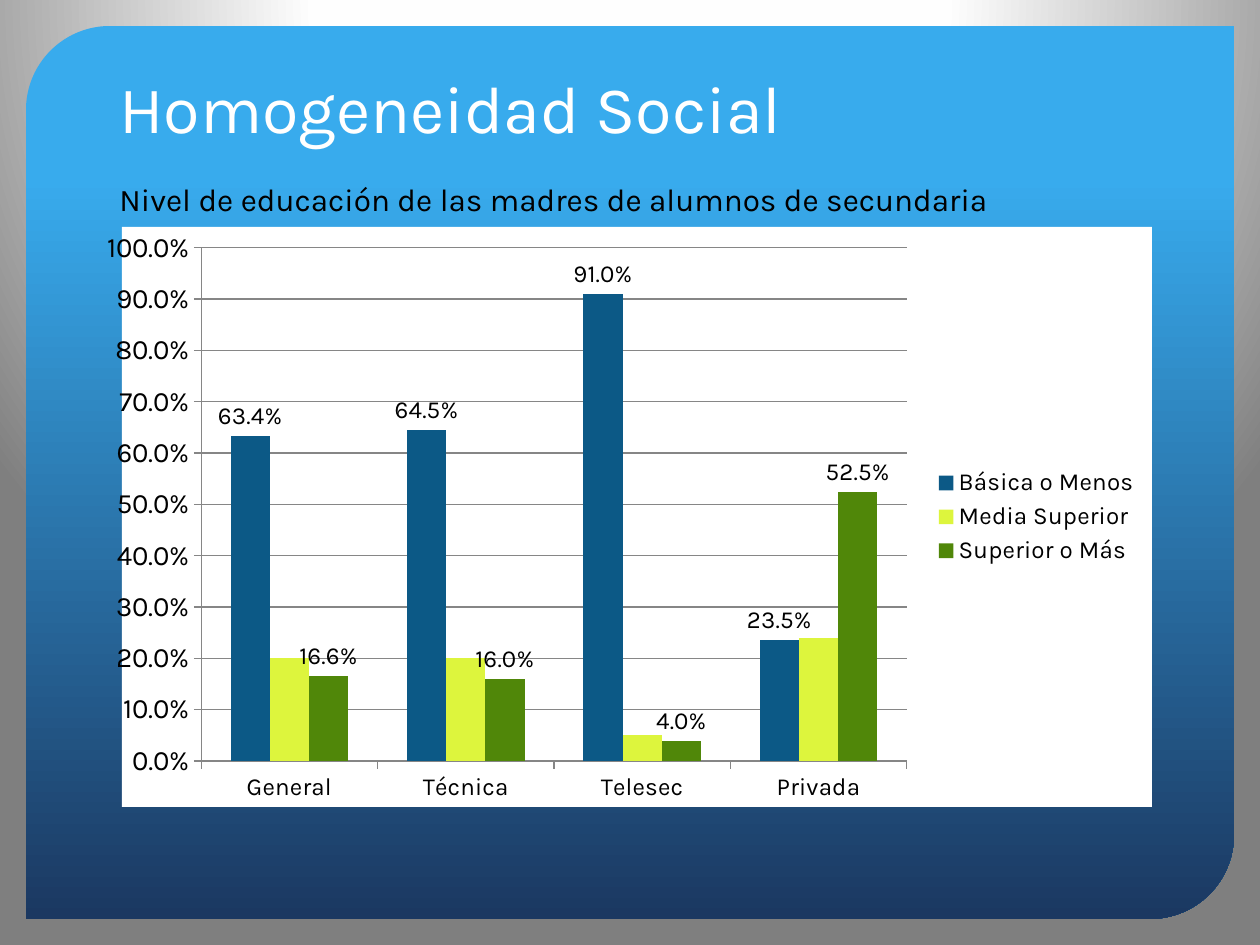
from copy import deepcopy

from pptx import Presentation
from pptx.chart.data import CategoryChartData
from pptx.dml.color import RGBColor
from pptx.enum.chart import XL_CHART_TYPE, XL_LABEL_POSITION, XL_LEGEND_POSITION, XL_TICK_MARK
from pptx.enum.shapes import MSO_SHAPE
from pptx.enum.text import MSO_ANCHOR
from pptx.oxml import parse_xml
from pptx.oxml.ns import nsdecls, qn
from pptx.util import Pt

PX = 914400 / 126
FONT = "Karla"
color = RGBColor.from_string


def box(*lengths):
    return [round(length * PX) for length in lengths]


def add_text(text, frame, size, fill, anchor=MSO_ANCHOR.TOP):
    text_frame = slide.shapes.add_textbox(*box(*frame)).text_frame
    text_frame.word_wrap = True
    text_frame.vertical_anchor = anchor
    paragraph = text_frame.paragraphs[0]
    paragraph.text = text
    font = paragraph.runs[0].font
    font.name = FONT
    font.size = Pt(size)
    font.color.rgb = color(fill)


presentation = Presentation()
presentation.slide_width, presentation.slide_height = box(1260, 945)
slide = presentation.slides.add_slide(presentation.slide_layouts[6])

background = slide.background.fill
background.gradient()
gradient = slide.element.find(".//" + qn("a:gradFill"))
stop_list = gradient.find(qn("a:gsLst"))
stop_list.append(deepcopy(stop_list[-1]))
for stop, position, fill in zip(background.gradient_stops, (0, 0.4, 1), ("FFFFFF", "FEFEFE", "7F7F7F")):
    stop.position = position
    stop.color.rgb = color(fill)
gradient.replace(gradient.find(qn("a:lin")), parse_xml(
    f'<a:path {nsdecls("a")} path="circle">'
    '<a:fillToRect l="50000" t="-80000" r="50000" b="180000"/></a:path>'))

panel = slide.shapes.add_shape(MSO_SHAPE.ROUND_2_DIAG_RECTANGLE, *box(26, 26, 1208, 893))
panel.shadow.inherit = False
panel.adjustments[0] = 0.094
panel.adjustments[1] = 0
panel.line.fill.background()
panel.fill.gradient()
panel.fill.gradient_angle = 270
for stop, position, fill in zip(panel.fill.gradient_stops, (0.17, 1), ("38ABED", "1B3861")):
    stop.position = position
    stop.color.rgb = color(fill)

add_text("Homogeneidad Social", (107, 53, 1045, 100), 38, "FFFFFF", MSO_ANCHOR.BOTTOM)

series_data = [
    ("Básica o Menos", (0.634, 0.645, 0.91, 0.235), "0C5986", True),
    ("Media Superior", (0.2, 0.2, 0.05, 0.24), "DDF53D", False),
    ("Superior o Más", (0.166, 0.16, 0.04, 0.525), "508709", True),
]
chart_data = CategoryChartData(number_format="0.0%")
chart_data.categories = ["General", "Técnica", "Telesec", "Privada"]
for name, values, fill, labelled in series_data:
    chart_data.add_series(name, values)
chart = slide.shapes.add_chart(
    XL_CHART_TYPE.COLUMN_CLUSTERED, *box(107, 227, 1045, 580), chart_data).chart
chart.has_title = False
chart.font.name = FONT
chart.font.size = Pt(10)
chart.font.color.rgb = color("000000")
chart.has_legend = True
chart.legend.position = XL_LEGEND_POSITION.RIGHT
chart.legend.include_in_layout = False
chart.legend.font.size = Pt(14)

plot = chart.plots[0]
plot.gap_width = 150
plot.overlap = 0
plot.vary_by_categories = False
for series, (name, values, fill, labelled) in zip(plot.series, series_data):
    series.invert_if_negative = False
    series.format.fill.solid()
    series.format.fill.fore_color.rgb = color(fill)
    if labelled:
        labels = series.data_labels
        labels.show_value = True
        labels.position = XL_LABEL_POSITION.OUTSIDE_END
        labels.number_format = "0.0%"
        labels.number_format_is_linked = False
        labels.font.size = Pt(14)

value_axis = chart.value_axis
value_axis.minimum_scale = 0
value_axis.maximum_scale = 1
value_axis.major_unit = 0.1
value_axis.has_major_gridlines = True
value_axis.tick_labels.number_format = "0.0%"
value_axis.tick_labels.number_format_is_linked = False
for axis, size in ((chart.category_axis, 14), (value_axis, 16)):
    axis.major_tick_mark = XL_TICK_MARK.OUTSIDE
    axis.tick_labels.font.size = Pt(size)
for line in (chart.category_axis.format.line, value_axis.format.line, value_axis.major_gridlines.format.line):
    line.color.rgb = color("868686")
    line.width = Pt(0.75)

chart_space = chart.element if hasattr(chart, "element") else chart._chartSpace
chart_space.find(qn("c:txPr")).addprevious(parse_xml(
    f'<c:spPr {nsdecls("c", "a")}><a:solidFill><a:srgbClr val="FFFFFF"/></a:solidFill>'
    '<a:ln><a:noFill/></a:ln></c:spPr>'))
plot_area = chart_space.find(".//" + qn("c:plotArea"))
for layout in plot_area.findall(qn("c:layout")):
    plot_area.remove(layout)
plot_area.insert(0, parse_xml(
    f'<c:layout {nsdecls("c")}><c:manualLayout><c:layoutTarget val="inner"/>'
    '<c:xMode val="edge"/><c:yMode val="edge"/><c:x val="0.077"/><c:y val="0.036"/>'
    '<c:w val="0.685"/><c:h val="0.885"/></c:manualLayout></c:layout>'))

add_text("Nivel de educación de las madres de alumnos de secundaria", (107, 174, 1045, 50), 18, "000000")

presentation.save("out.pptx")
